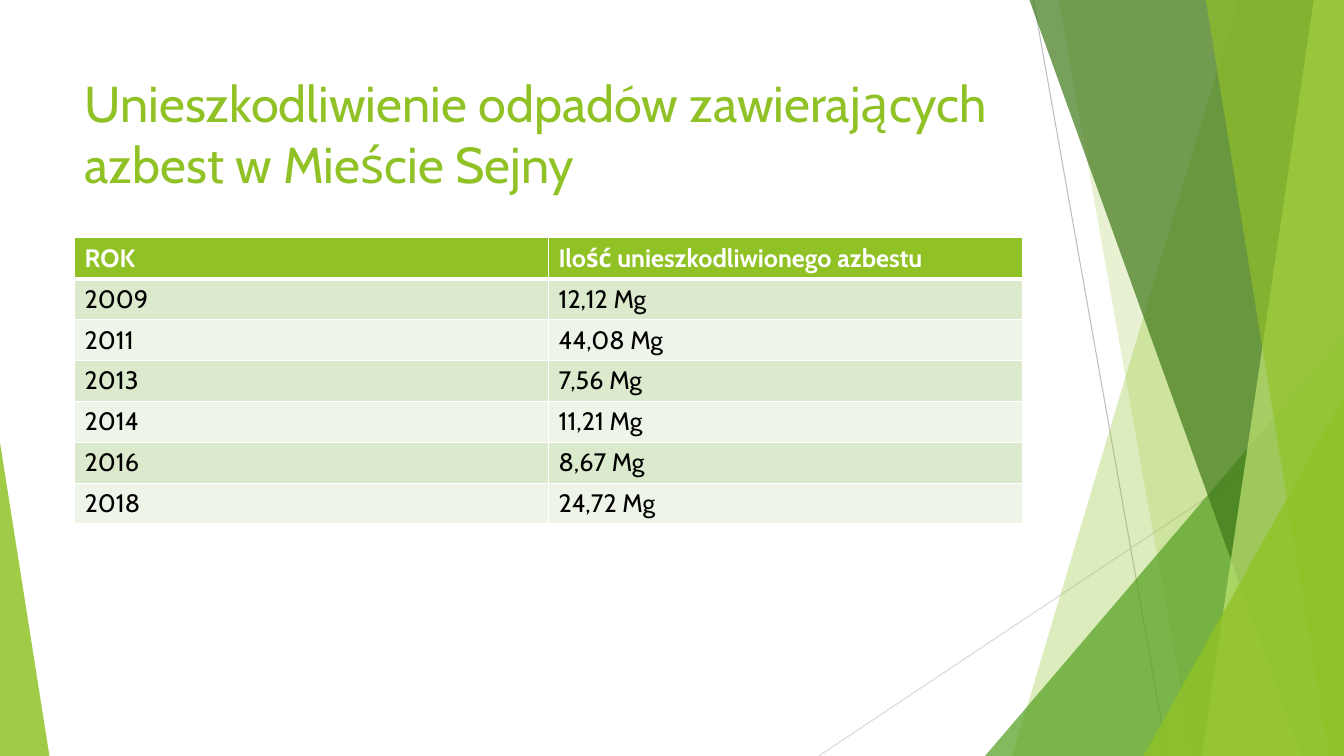
from dataclasses import dataclass

from lxml.etree import SubElement as Sub
from pptx import Presentation
from pptx.dml.color import RGBColor
from pptx.enum.shapes import MSO_CONNECTOR as Link, MSO_SHAPE as Geo
from pptx.enum.text import MSO_ANCHOR as Anchor, MSO_AUTO_SIZE as Fit, PP_ALIGN as Align
from pptx.oxml.ns import qn
from pptx.shapes.base import BaseShape
from pptx.slide import Slide
from pptx.table import _Cell as Cell
from pptx.text.text import TextFrame
from pptx.util import Inches, Pt

WIDE, HIGH = 13.33, 7.5
FACE = "Cabin"
WHITE = RGBColor(0xFF, 0xFF, 0xFF)
BLACK = RGBColor(0, 0, 0)
LIME = RGBColor(0x90, 0xC2, 0x26)
GREEN = RGBColor(0x54, 0xA0, 0x21)
DARK = RGBColor(0x3F, 0x78, 0x19)
PALE = RGBColor(0xC0, 0xE4, 0x74)
MIST = RGBColor(0xDB, 0xE9, 0xCD)
HAZE = RGBColor(0xEE, 0xF4, 0xE8)
GREY = RGBColor(0xBF, 0xBF, 0xBF)
SILVER = RGBColor(0xD9, 0xD9, 0xD9)


@dataclass
class Ray:
    start: tuple[float, float]
    end: tuple[float, float]
    color: RGBColor


@dataclass
class Band:
    """Area between a slanted edge and the right side of the slide."""
    head: float
    foot: float
    color: RGBColor
    alpha: int


@dataclass
class Wedge:
    """Right triangle standing on the bottom of the slide."""
    left: float
    top: float
    width: float
    peak: float
    color: RGBColor
    alpha: int


RAYS = [
    Ray((10.25, 0), (11.58, HIGH), GREY),
    Ray((WIDE, 4.03), (8.12, HIGH), SILVER),
]
FACETS = [
    Band(12.28, 10.04, LIME, 30),
    Band(10.5, 11.83, LIME, 20),
    Wedge(9.77, 3.33, 3.56, 1, GREEN, 72),
    Band(10.21, 12.91, DARK, 70),
    Band(13.03, 11.92, PALE, 70),
    Band(11.96, 13.18, LIME, 65),
    Wedge(11.34, 3.93, 1.99, 1, LIME, 80),
    Wedge(0, 4.39, 0.49, 0, LIME, 85),
]
TITLE = "Unieszkodliwienie odpadów zawierających azbest w Mieście Sejny"
ROWS = [
    ("ROK", "Ilość unieszkodliwionego azbestu"),
    ("2009", "12,12 Mg"),
    ("2011", "44,08 Mg"),
    ("2013", "7,56 Mg"),
    ("2014", "11,21 Mg"),
    ("2016", "8,67 Mg"),
    ("2018", "24,72 Mg"),
]


def style(item: object, form: dict) -> None:
    for name, value in form.items():
        setattr(item, name, value)


def write(frame: TextFrame, text: str, size: int, color: RGBColor, bold: bool = False) -> None:
    frame.text = text
    para = frame.paragraphs[0]
    para.alignment = Align.LEFT
    font = para.runs[0].font
    style(font, {"name": FACE, "size": Pt(size), "bold": bold})
    font.color.rgb = color


def draw_ray(slide: Slide, ray: Ray) -> None:
    ends = [Inches(v) for v in ray.start + ray.end]
    line = slide.shapes.add_connector(Link.STRAIGHT, *ends)
    line.line.color.rgb = ray.color
    line.line.width = Pt(0.75)
    Sub(line.element.spPr, qn("a:effectLst"))


def outline(slide: Slide, facet: Band | Wedge) -> BaseShape:
    if isinstance(facet, Band):
        spots = [(facet.head, 0), (WIDE, 0), (WIDE, HIGH), (facet.foot, HIGH)]
        first, *rest = [(Inches(x), Inches(y)) for x, y in spots]
        pen = slide.shapes.build_freeform(*first)
        pen.add_line_segments(rest)
        return pen.convert_to_shape()
    box = (facet.left, facet.top, facet.width, HIGH - facet.top)
    shape = slide.shapes.add_shape(Geo.ISOSCELES_TRIANGLE, *map(Inches, box))
    shape.adjustments[0] = facet.peak
    return shape


def draw_facet(slide: Slide, facet: Band | Wedge) -> None:
    shape = outline(slide, facet)
    shape.shadow.inherit = False
    shape.line.fill.background()
    shape.fill.solid()
    shape.fill.fore_color.rgb = facet.color
    tint = shape.element.spPr.find(qn("a:solidFill"))[0]
    Sub(tint, qn("a:alpha"), val=str(facet.alpha * 1000))


def add_title(slide: Slide) -> None:
    title = slide.shapes.title
    style(title, {"left": Inches(0.74), "top": Inches(0.67),
                  "width": Inches(9.4), "height": Inches(1.44)})
    frame = title.text_frame
    style(frame, {"word_wrap": True, "auto_size": Fit.NONE, "vertical_anchor": Anchor.TOP})
    write(frame, TITLE, 36, LIME)
    slide.shapes.element.append(title.element)


def edge(cell: Cell, row: int) -> None:
    """Give the cell white borders, thick under the header."""
    props = cell._tc.get_or_add_tcPr()
    thick = {("B", 0), ("T", 1)}
    for side in "LRTB":
        width = Pt(3 if (side, row) in thick else 1)
        line = Sub(props, qn(f"a:ln{side}"), w=str(width))
        Sub(Sub(line, qn("a:solidFill")), qn("a:srgbClr"), val=str(WHITE))


def add_data(slide: Slide) -> None:
    box = map(Inches, (0.74, 2.36, 9.4, 2.84))
    table = slide.shapes.add_table(len(ROWS), len(ROWS[0]), *box).table
    for r, row in enumerate(ROWS):
        top = r == 0
        back = LIME if top else (HAZE, MIST)[r % 2]
        for c, text in enumerate(row):
            cell = table.cell(r, c)
            edge(cell, r)
            cell.fill.solid()
            cell.fill.fore_color.rgb = back
            write(cell.text_frame, text, 18, WHITE if top else BLACK, top)


def main() -> None:
    deck = Presentation()
    style(deck, {"slide_width": Inches(WIDE), "slide_height": Inches(HIGH)})
    slide = deck.slides.add_slide(deck.slide_layouts[5])
    for ray in RAYS:
        draw_ray(slide, ray)
    for facet in FACETS:
        draw_facet(slide, facet)
    add_title(slide)
    add_data(slide)
    deck.save("out.pptx")


if __name__ == "__main__":
    main()
